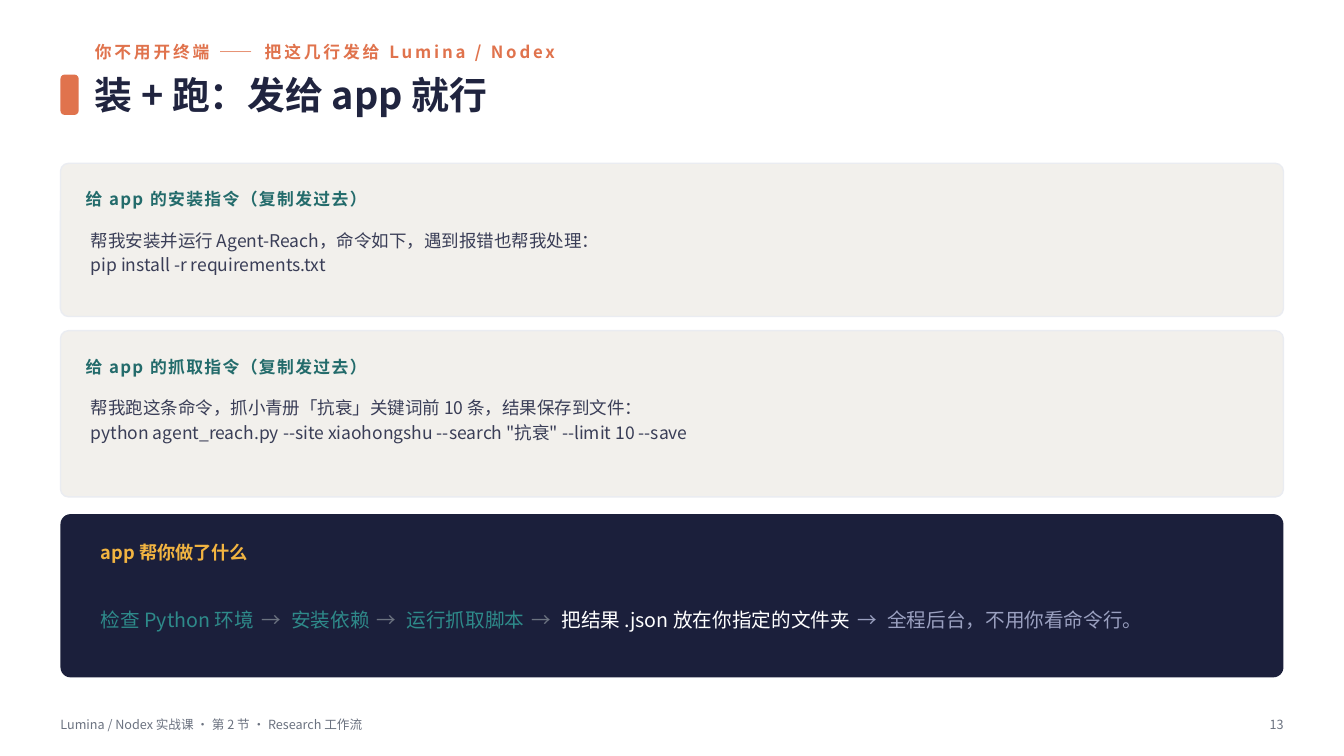
from dataclasses import dataclass

from pptx import Presentation
from pptx.dml.color import RGBColor
from pptx.enum.shapes import MSO_SHAPE
from pptx.enum.text import MSO_ANCHOR, PP_ALIGN
from pptx.util import Emu, Pt

ROUNDED = MSO_SHAPE.ROUNDED_RECTANGLE
TOP, MIDDLE = MSO_ANCHOR.TOP, MSO_ANCHOR.MIDDLE
LEFT, RIGHT = PP_ALIGN.LEFT, PP_ALIGN.RIGHT


@dataclass(frozen=True)
class Theme:
    font: str = "Noto Sans CJK SC"
    accent: str = "E0734D"
    title: str = "20243F"
    card: str = "F2F0EC"
    card_line: str = "EAECF1"
    heading: str = "236B6B"
    body: str = "3A3E57"
    panel: str = "1B1F3B"
    panel_heading: str = "F2B441"
    step: str = "2E8A8A"
    result: str = "FFFFFF"
    closing: str = "9AA0C0"
    muted: str = "6B7280"
    title_size: float = 27
    step_size: float = 14
    panel_heading_size: float = 13
    body_size: float = 12.5
    label_size: float = 12
    footer_size: float = 9


THEME = Theme()

# Content
KICKER = "你不用开终端 —— 把这几行发给 Lumina / Nodex"
TITLE = "装 + 跑：发给 app 就行"
# card height, heading, body lines
CARDS = [
    (152, "给 app 的安装指令（复制发过去）",
     ["帮我安装并运行 Agent-Reach，命令如下，遇到报错也帮我处理：",
      "pip install -r requirements.txt"]),
    (165, "给 app 的抓取指令（复制发过去）",
     ["帮我跑这条命令，抓小青册「抗衰」关键词前 10 条，结果保存到文件：",
      'python agent_reach.py --site xiaohongshu --search "抗衰" --limit 10 --save']),
]
PANEL_HEADING = "app 帮你做了什么"
# step, its colour, colour of the arrow before it
STEPS = [
    ("检查 Python 环境", THEME.step, None),
    ("安装依赖", THEME.step, THEME.muted),
    ("运行抓取脚本", THEME.step, THEME.muted),
    ("把结果 .json 放在你指定的文件夹", THEME.result, THEME.muted),
    ("全程后台，不用你看命令行。", THEME.closing, THEME.closing),
]
FOOTER = "Lumina / Nodex 实战课 · 第 2 节 · Research 工作流"
PAGE_NUMBER = "13"

# Layout in px, 100 px to the inch
PX = 9144
SLIDE_W, SLIDE_H = 1333, 750
MARGIN = 60
CONTENT_W = SLIDE_W - 2 * MARGIN
TITLE_LEFT = 94
TITLE_W = SLIDE_W - MARGIN - TITLE_LEFT
CARDS_TOP, CARD_GAP = 162, 14
PANEL_TOP, PANEL_H = 510, 162
PANEL_TEXT_LEFT = 100
FOOTER_TOP, FOOTER_H = 704, 30
PAGE_W = 70

deck = Presentation()
deck.slide_width, deck.slide_height = Emu(SLIDE_W * PX), Emu(SLIDE_H * PX)
slide = deck.slides.add_slide(deck.slide_layouts[6])


def place(left, top, width, height):
    return [Emu(length * PX) for length in (left, top, width, height)]


def add_block(left, top, width, height, radius, fill, line=None):
    block = slide.shapes.add_shape(ROUNDED, *place(left, top, width, height))
    block.adjustments[0] = round(radius / min(width, height), 3)
    block.shadow.inherit = False
    block.fill.solid()
    block.fill.fore_color.rgb = RGBColor.from_string(fill)
    if line:
        block.line.color.rgb = RGBColor.from_string(line)
        block.line.width = Pt(1)
    else:
        block.line.fill.background()


def add_text(lines, left, top, width, height, *, size, color=None, bold=False,
             spacing=0, anchor=MIDDLE, align=LEFT, leading=None):
    """Each line is a string or a list of (text, color, spacing) runs."""
    frame = slide.shapes.add_textbox(*place(left, top, width, height)).text_frame
    frame.word_wrap = True
    frame.vertical_anchor = anchor
    frame.margin_left = frame.margin_right = 0
    frame.margin_top = frame.margin_bottom = 0
    for index, line in enumerate(lines):
        paragraph = frame.add_paragraph() if index else frame.paragraphs[0]
        paragraph.alignment = align
        if leading:
            paragraph.line_spacing = leading
        runs = [(line, color, spacing)] if isinstance(line, str) else line
        for text, run_color, run_spacing in runs:
            run = paragraph.add_run()
            run.text = text
            run.font.name = THEME.font
            run.font.size = Pt(size)
            run.font.bold = bold
            run.font.color.rgb = RGBColor.from_string(run_color)
            properties = run.font._element
            if run_spacing:
                properties.set("spc", str(run_spacing * 100))
            # East Asian glyphs take the same font
            east_asian = properties.makeelement(
                properties.find("{*}latin").tag.replace("latin", "ea"),
                {"typeface": THEME.font})
            properties.append(east_asian)


# Header
add_text([KICKER], TITLE_LEFT, 36, TITLE_W, 30, size=THEME.label_size,
         color=THEME.accent, bold=True, spacing=2)
add_block(MARGIN, 74, 18, 40, 4, THEME.accent)
add_text([TITLE], TITLE_LEFT, 64, TITLE_W, 60, size=THEME.title_size,
         color=THEME.title, bold=True)

# Instruction cards
card_top = CARDS_TOP
for card_h, heading, body in CARDS:
    add_block(MARGIN, card_top, CONTENT_W, card_h, 8, THEME.card, THEME.card_line)
    add_text([heading], MARGIN + 25, card_top + 18, CONTENT_W - 50, 35,
             size=THEME.label_size, color=THEME.heading, bold=True, spacing=1)
    add_text(body, MARGIN + 30, card_top + 62, CONTENT_W - 60, card_h - 80,
             size=THEME.body_size, color=THEME.body, anchor=TOP, leading=1.18)
    card_top += card_h + CARD_GAP

# Dark panel with the chain of steps
add_block(MARGIN, PANEL_TOP, CONTENT_W, PANEL_H, 10, THEME.panel)
add_text([PANEL_HEADING], PANEL_TEXT_LEFT, PANEL_TOP + 20, 1100, 35,
         size=THEME.panel_heading_size, color=THEME.panel_heading, bold=True)
chain = []
for step, step_color, arrow_color in STEPS:
    if arrow_color:
        chain.append((" → ", arrow_color, 2))
    chain.append((step, step_color, 0))
add_text([chain], PANEL_TEXT_LEFT, PANEL_TOP + 58, SLIDE_W - 2 * PANEL_TEXT_LEFT, 88,
         size=THEME.step_size, leading=1.25)

# Footer
add_text([FOOTER], MARGIN, FOOTER_TOP, 900, FOOTER_H,
         size=THEME.footer_size, color=THEME.muted)
add_text([PAGE_NUMBER], SLIDE_W - MARGIN - PAGE_W, FOOTER_TOP, PAGE_W, FOOTER_H,
         size=THEME.footer_size, color=THEME.muted, align=RIGHT)

deck.save("out.pptx")
